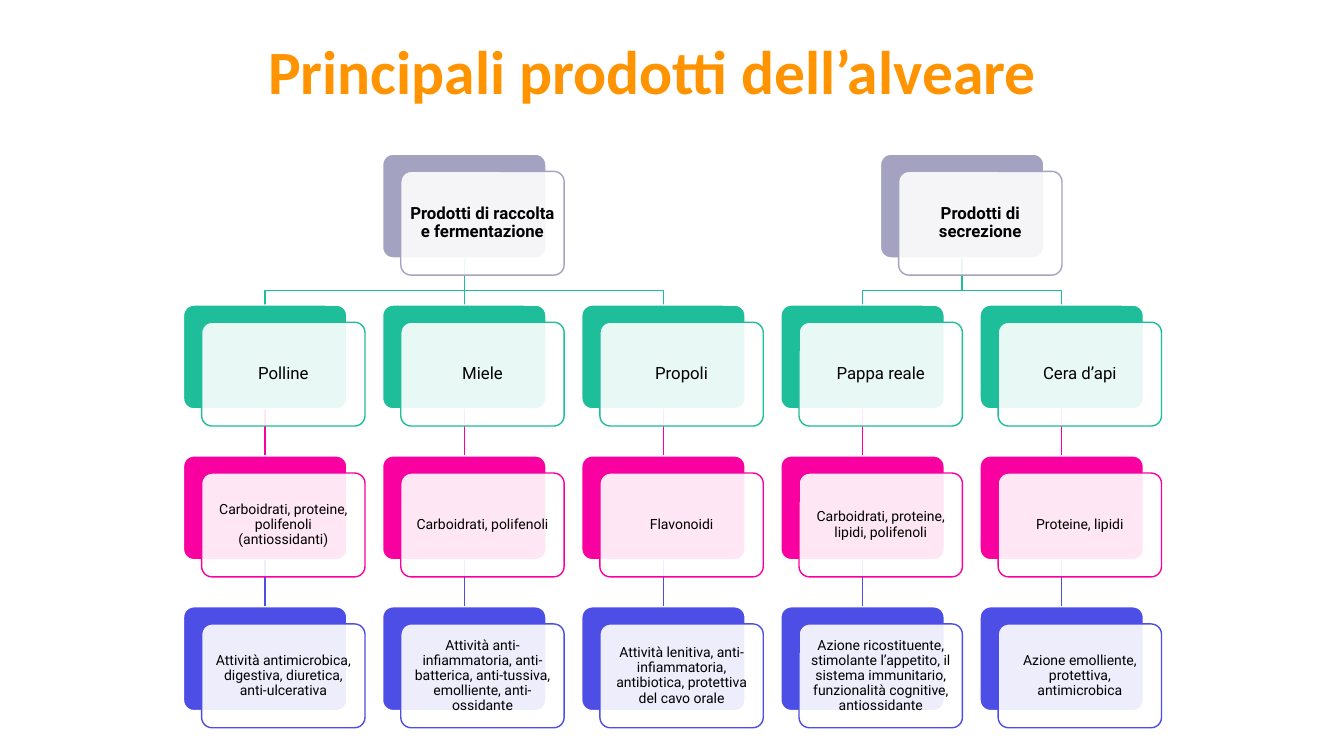
from lxml.etree import SubElement
from pptx import Presentation
from pptx.dml.color import RGBColor
from pptx.enum.shapes import MSO_CONNECTOR, MSO_SHAPE
from pptx.enum.text import MSO_ANCHOR, MSO_AUTO_SIZE, PP_ALIGN
from pptx.oxml.ns import qn
from pptx.util import Inches, Pt

WHITE = RGBColor(0xFF, 0xFF, 0xFF)
BLACK = RGBColor(0x00, 0x00, 0x00)
ORANGE = RGBColor(0xFF, 0x93, 0x00)
GREY = RGBColor(0xA3, 0xA3, 0xC1)
GREEN = RGBColor(0x1E, 0xBE, 0x9B)
PINK = RGBColor(0xF9, 0x00, 0xA0)
BLUE = RGBColor(0x4D, 0x4E, 0xE6)

LEFT, TOP = 1.82, 1.53
COLUMN, ROW = 7.9 / 4, 4.49 / 3
CARD_WIDTH, CARD_HEIGHT = 1.62, 1.03
OFFSET_X, OFFSET_Y = 0.18, 0.17
BRANCH_DROP = 0.32

LEVEL_COLOURS = [GREEN, PINK, BLUE]
LEVEL_SIZES = [12, 10, 10]
FAMILIES = [
    ("Prodotti di raccolta e fermentazione", [0, 1, 2]),
    ("Prodotti di secrezione", [3, 4]),
]
PRODUCTS = [
    ("Polline", "Carboidrati, proteine, polifenoli (antiossidanti)",
     "Attività antimicrobica, digestiva, diuretica, anti-ulcerativa"),
    ("Miele", "Carboidrati, polifenoli",
     "Attività anti-infiammatoria, anti-batterica, anti-tussiva, emolliente, anti-ossidante"),
    ("Propoli", "Flavonoidi",
     "Attività lenitiva, anti-infiammatoria, antibiotica, protettiva del cavo orale"),
    ("Pappa reale", "Carboidrati, proteine, lipidi, polifenoli",
     "Azione ricostituente, stimolante l’appetito, il sistema immunitario, "
     "funzionalità cognitive, antiossidante"),
    ("Cera d’api", "Proteine, lipidi",
     "Azione emolliente, protettiva, antimicrobica"),
]


def card_corner(column, row):
    return LEFT + column * COLUMN, TOP + row * ROW


def write(para, text, font, size, colour, bold):
    para.line_spacing = 0.9
    span = para.add_run()
    span.text = text
    span.font.name = font
    span.font.size = Pt(size)
    span.font.color.rgb = colour
    span.font.bold = bold


def add_title(page, text):
    title = page.shapes.title
    title.left, title.top = Inches(2.56), Inches(-0.53)
    title.width, title.height = Inches(11.5), Inches(2.54)
    frame = title.text_frame
    frame.auto_size = MSO_AUTO_SIZE.NONE
    frame.vertical_anchor = MSO_ANCHOR.MIDDLE
    para = frame.paragraphs[0]
    para.alignment = PP_ALIGN.LEFT
    write(para, text, "Calibri", 44, ORANGE, True)


def add_panel(page, left, top, fill, line):
    panel = page.shapes.add_shape(
        MSO_SHAPE.ROUNDED_RECTANGLE, Inches(left), Inches(top),
        Inches(CARD_WIDTH), Inches(CARD_HEIGHT))
    panel.adjustments[0] = 0.1
    panel.shadow.inherit = False
    panel.fill.solid()
    panel.fill.fore_color.rgb = fill
    panel.line.color.rgb = line
    panel.line.width = Pt(1)
    return panel


def add_card(page, column, row, text, colour, size, bold=False):
    left, top = card_corner(column, row)
    add_panel(page, left, top, colour, WHITE)
    front = add_panel(page, left + OFFSET_X, top + OFFSET_Y, WHITE, colour)
    fill_colour = front.fill._xPr.find(qn("a:solidFill"))[0]
    SubElement(fill_colour, qn("a:alpha")).set("val", "90000")
    frame = front.text_frame
    frame.word_wrap = True
    frame.vertical_anchor = MSO_ANCHOR.MIDDLE
    margin = Pt(size * 0.3)
    frame.margin_left = frame.margin_right = margin
    frame.margin_top = frame.margin_bottom = margin
    para = frame.paragraphs[0]
    para.alignment = PP_ALIGN.CENTER
    write(para, text, "Roboto", size, BLACK, bold)


def add_link(page, column, row, colour):
    left, top = card_corner(column, row)
    middle = Inches(left + CARD_WIDTH / 2)
    link = page.shapes.add_connector(
        MSO_CONNECTOR.STRAIGHT, middle, Inches(top + CARD_HEIGHT),
        middle, Inches(top + ROW))
    link.line.color.rgb = colour
    link.line.width = Pt(1)
    SubElement(link._element.spPr, qn("a:effectLst"))


def add_branch(page, parent, child, colour):
    left, top = card_corner(parent, 0)
    start = left + CARD_WIDTH / 2
    end = start + (child - parent) * COLUMN
    bottom = top + CARD_HEIGHT
    bend = bottom + BRANCH_DROP
    builder = page.shapes.build_freeform(Inches(start), Inches(bottom))
    corners = [(start, bend), (end, bend), (end, top + ROW)]
    builder.add_line_segments(
        [(Inches(x), Inches(y)) for x, y in corners], close=False)
    branch = builder.convert_to_shape()
    branch.shadow.inherit = False
    branch.fill.background()
    branch.line.color.rgb = colour
    branch.line.width = Pt(1)


def add_links(page):
    for _, children in FAMILIES:
        parent = sum(children) / len(children)
        for child in children:
            if child == parent:
                add_link(page, child, 0, GREEN)
            else:
                add_branch(page, parent, child, GREEN)
    for column in range(len(PRODUCTS)):
        for row, colour in enumerate(LEVEL_COLOURS[1:], start=1):
            add_link(page, column, row, colour)


def add_cards(page):
    for name, children in FAMILIES:
        add_card(page, sum(children) / len(children), 0, name, GREY, 12, True)
    for column, texts in enumerate(PRODUCTS):
        levels = zip(texts, LEVEL_COLOURS, LEVEL_SIZES)
        for row, (text, colour, size) in enumerate(levels, start=1):
            add_card(page, column, row, text, colour, size)


def main():
    deck = Presentation()
    deck.slide_width, deck.slide_height = Inches(13.33), Inches(7.5)
    page = deck.slides.add_slide(deck.slide_layouts[5])
    add_title(page, "Principali prodotti dell’alveare")
    add_links(page)
    add_cards(page)
    deck.save("out.pptx")


if __name__ == "__main__":
    main()
